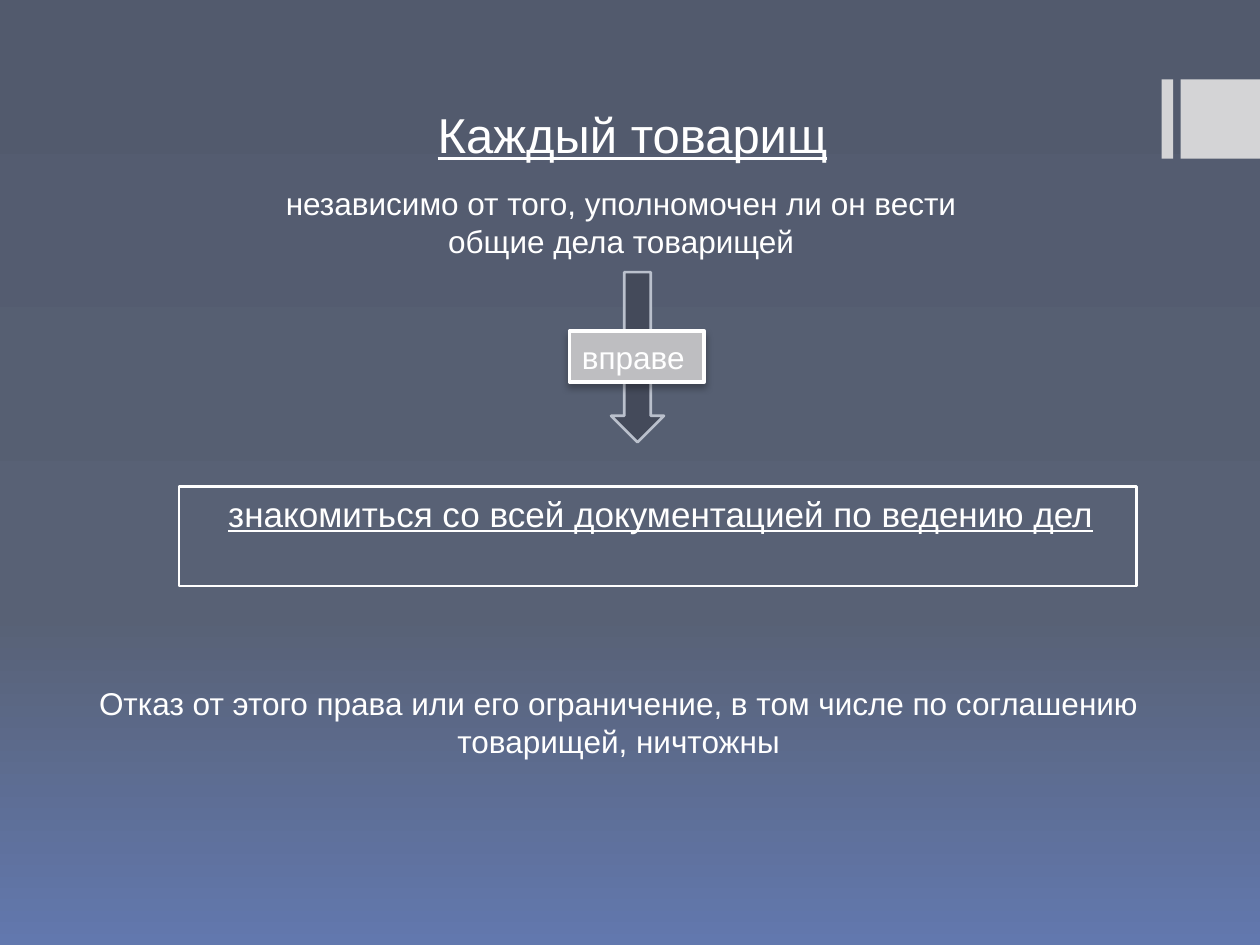
from dataclasses import dataclass
from typing import Optional

from lxml.etree import SubElement
from pptx import Presentation
from pptx.dml.color import RGBColor
from pptx.enum.shapes import MSO_SHAPE
from pptx.enum.text import MSO_ANCHOR, MSO_AUTO_SIZE, PP_ALIGN
from pptx.oxml import parse_xml
from pptx.oxml.ns import nsdecls, qn
from pptx.util import Inches, Pt


@dataclass(frozen=True)
class Theme:
    font: str = "Arial"
    title: int = 28
    right: int = 20
    body: int = 18
    text: str = "FFFFFF"
    accent: str = "D4D4D6"
    arrow: str = "444A5A"
    arrow_line: str = "BAC0CC"
    label: str = "BEBEC1"
    shadow: str = "000000"
    background: tuple = ((0, "525A6D"), (65, "586175"), (100, "6278AE"))


@dataclass(frozen=True)
class Box:
    left: float
    top: float
    width: float
    height: float

    def lengths(self) -> tuple:
        return tuple(Inches(v) for v in (self.left, self.top, self.width, self.height))


@dataclass(frozen=True)
class Copy:
    text: str
    size: int
    underline: bool = False
    align: PP_ALIGN = PP_ALIGN.CENTER
    indent: float = 0
    space_before: float = 0  # share of the type size
    grow: bool = False


THEME = Theme()


def set_background(slide, stops: tuple) -> None:
    """Fill the background with a top-to-bottom gradient of (percent, colour) stops."""
    fill = slide.background.fill
    fill.solid()
    bg_pr = slide.background._cSld.bg.bgPr
    gs = "".join(
        f'<a:gs pos="{pos * 1000}"><a:srgbClr val="{color}"/></a:gs>' for pos, color in stops
    )
    grad = parse_xml(
        f'<a:gradFill {nsdecls("a")} rotWithShape="1"><a:gsLst>{gs}</a:gsLst>'
        '<a:lin ang="5400000" scaled="0"/></a:gradFill>'
    )
    bg_pr.replace(bg_pr.find(qn("a:solidFill")), grad)


def write(sp, copy: Copy) -> None:
    tf = sp.text_frame
    tf.word_wrap = True
    tf.vertical_anchor = MSO_ANCHOR.TOP
    tf.auto_size = MSO_AUTO_SIZE.SHAPE_TO_FIT_TEXT if copy.grow else MSO_AUTO_SIZE.NONE
    p = tf.paragraphs[0]
    p.alignment = copy.align
    if copy.space_before:
        p.space_before = Pt(copy.size * copy.space_before)
    if copy.indent:
        p_pr = p._p.get_or_add_pPr()
        p_pr.set("marL", str(Inches(copy.indent)))
        p_pr.set("indent", "0")
    r = p.add_run()
    r.text = copy.text
    r.font.name = THEME.font
    r.font.size = Pt(copy.size)
    r.font.underline = copy.underline
    r.font.color.rgb = RGBColor.from_string(THEME.text)


def add_text(slide, box: Box, copy: Copy) -> None:
    write(slide.shapes.add_textbox(*box.lengths()), copy)


def add_box(slide, box: Box, fill: Optional[str] = None, line: Optional[str] = None,
            weight: float = 1.5, kind: MSO_SHAPE = MSO_SHAPE.RECTANGLE):
    sp = slide.shapes.add_shape(kind, *box.lengths())
    sp.shadow.inherit = False
    if fill:
        sp.fill.solid()
        sp.fill.fore_color.rgb = RGBColor.from_string(fill)
    else:
        sp.fill.background()
    if line:
        sp.line.color.rgb = RGBColor.from_string(line)
        sp.line.width = Pt(weight)
    else:
        sp.line.fill.background()
    return sp


def add_shadow(sp, color: str, alpha: int, blur: float, distance: float) -> None:
    """Cast a soft shadow straight down."""
    effects = sp._element.spPr.find(qn("a:effectLst"))
    shadow = SubElement(effects, qn("a:outerShdw"), blurRad=str(Pt(blur)),
                        dist=str(Pt(distance)), dir="5400000", rotWithShape="0")
    clr = SubElement(shadow, qn("a:srgbClr"), val=color)
    SubElement(clr, qn("a:alpha"), val=str(alpha * 1000))


def main() -> None:
    prs = Presentation()
    prs.slide_width, prs.slide_height = Inches(10), Inches(7.5)
    s = prs.slides.add_slide(prs.slide_layouts[6])
    set_background(s, THEME.background)

    for left, width in ((9.22, 0.09), (9.37, 0.63)):
        add_box(s, Box(left, 0.63, width, 0.63), THEME.accent)

    add_text(s, Box(0.98, 0.78, 8.03, 0.63),
             Copy("Каждый товарищ", THEME.title, underline=True, indent=0.05, space_before=0.2))

    add_box(s, Box(4.85, 2.16, 0.42, 1.35), THEME.arrow, THEME.arrow_line,
            kind=MSO_SHAPE.DOWN_ARROW)

    right = add_box(s, Box(1.42, 3.86, 7.6, 0.79), line=THEME.text)
    write(right, Copy("знакомиться со всей документацией по ведению дел", THEME.right,
                      underline=True, indent=0.05, space_before=0.2))

    label = add_box(s, Box(4.52, 2.63, 1.07, 0.4), THEME.label, THEME.text, 2.25)
    add_shadow(label, THEME.shadow, alpha=28, blur=4, distance=3)
    write(label, Copy("вправе", THEME.body, align=PP_ALIGN.LEFT, grow=True))

    add_text(s, Box(0.42, 5.38, 8.98, 1.01),
             Copy("Отказ от этого права или его ограничение, в том числе по соглашению "
                  "товарищей, ничтожны", THEME.body, grow=True))
    add_text(s, Box(1.87, 1.41, 6.07, 0.71),
             Copy("независимо от того, уполномочен ли он вести общие дела товарищей",
                  THEME.body, indent=0.05, grow=True))

    prs.save("out.pptx")


if __name__ == "__main__":
    main()
